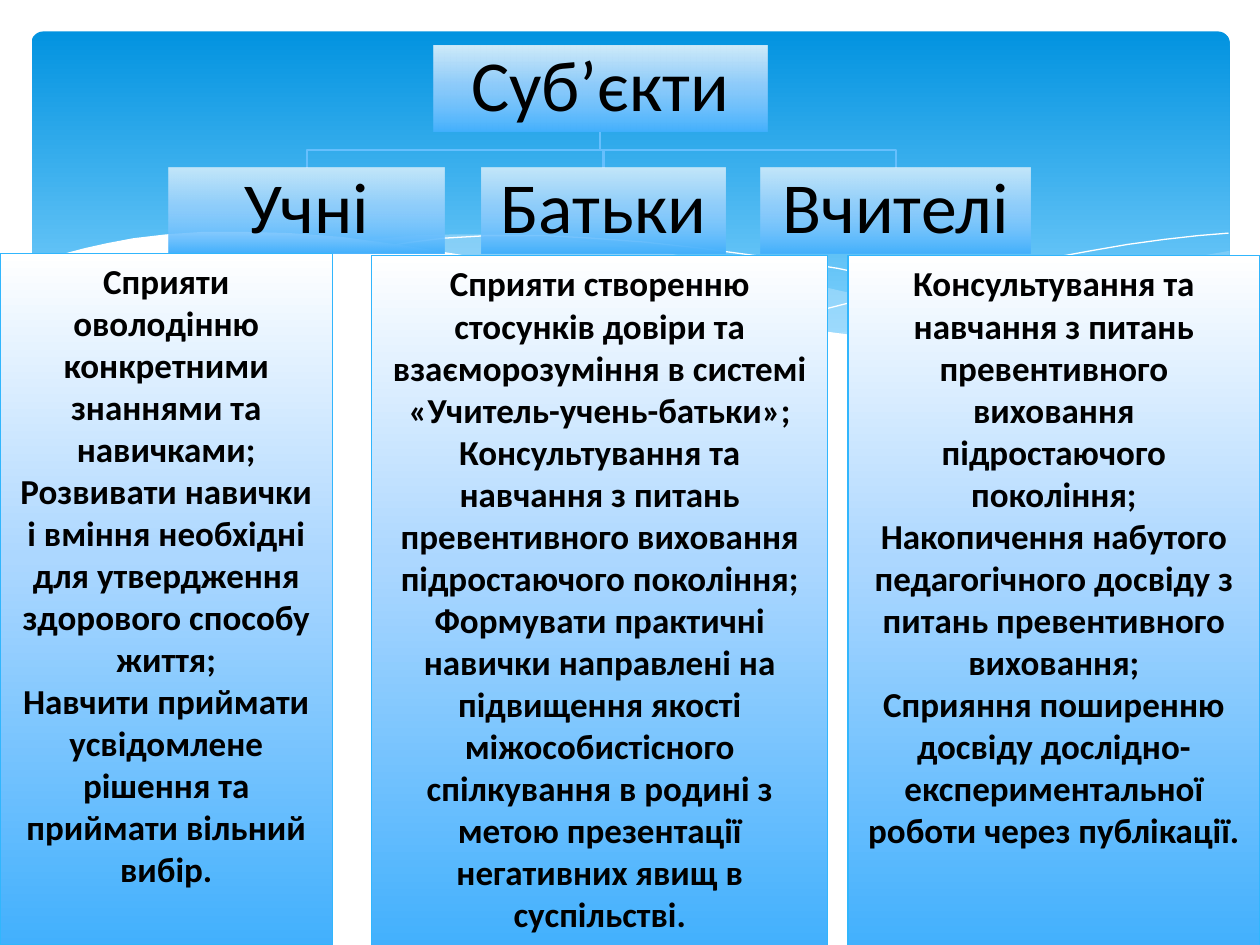
from lxml.etree import SubElement
from pptx import Presentation
from pptx.dml.color import RGBColor
from pptx.enum.shapes import MSO_SHAPE as Preset
from pptx.enum.text import MSO_ANCHOR as Anchor, PP_ALIGN as Align
from pptx.oxml.ns import qn
from pptx.util import Inches, Pt

COLORS = {
    "sky_top": "0293E0", "sky_bottom": "83D3FE", "mist": "C6E7FC",
    "white": "FFFFFF", "pale": "ACD7FF", "blue": "42B0FD",
    "branch": "66BFFD", "border": "31B6FD", "text": "000000",
}
SKY = [(0, "sky_top", 100), (90, "sky_bottom", 100)]


def box_stops(opacity):
    return [(0, "white", opacity), (44, "pale", opacity), (100, "blue", 100)]


class SlideBuilder:
    font_name = "Calibri"
    label_format = {"size": Pt(41), "bold": False}
    duty_format = {"size": Pt(20), "bold": True}

    def __init__(self, slide):
        self.slide = slide

    def color(self, name):
        return RGBColor.from_string(COLORS[name])

    def outline(self, shape, name, width):
        if name is None:
            shape.line.fill.background()
        else:
            shape.line.color.rgb = self.color(name)
            shape.line.width = Pt(width)

    def gradient(self, shape, stops):
        shape.fill.gradient()
        shape.fill.gradient_angle = 270
        stop_list = shape._element.spPr.find(qn("a:gradFill")).find(qn("a:gsLst"))
        for old_stop in list(stop_list):
            stop_list.remove(old_stop)
        for position, name, opacity in stops:
            stop = SubElement(stop_list, qn("a:gs"), pos=str(position * 1000))
            tint = SubElement(stop, qn("a:srgbClr"), val=COLORS[name])
            SubElement(tint, qn("a:alpha"), val=str(opacity * 1000))

    def box(self, bounds, stops, preset=Preset.RECTANGLE, line=None):
        shape = self.slide.shapes.add_shape(preset, *map(Inches, bounds))
        shape.shadow.inherit = False
        self.gradient(shape, stops)
        self.outline(shape, line, 0.75)
        return shape

    def set_text(self, shape, paragraphs, font_format, frame_format, spacing=1.0):
        frame = shape.text_frame
        for attribute, value in {"word_wrap": True, **frame_format}.items():
            setattr(frame, attribute, value)
        frame.text = "\n".join(paragraphs)
        for paragraph in frame.paragraphs:
            paragraph.alignment = Align.CENTER
            paragraph.line_spacing = spacing
            font = paragraph.runs[0].font
            font.color.rgb = self.color("text")
            for attribute, value in {"name": self.font_name, **font_format}.items():
                setattr(font, attribute, value)

    def label(self, text, bounds, opacity):
        margins = ("margin_left", "margin_top", "margin_right", "margin_bottom")
        frame_format = {"vertical_anchor": Anchor.MIDDLE, **dict.fromkeys(margins, Inches(0.03))}
        self.set_text(self.box(bounds, box_stops(opacity)), [text], self.label_format, frame_format, 0.9)

    def duties(self, paragraphs, bounds):
        column = self.box(bounds, box_stops(100), line="border")
        self.set_text(column, paragraphs, self.duty_format, {"vertical_anchor": Anchor.TOP})

    def outline_shape(self, points, fill=None, opacity=100, line=None, width=0):
        corners = [(Inches(x), Inches(y)) for x, y in points]
        builder = self.slide.shapes.build_freeform(*corners[0])
        builder.add_line_segments(corners[1:], close=fill is not None)
        shape = builder.convert_to_shape()
        shape.shadow.inherit = False
        if fill is None:
            shape.fill.background()
        else:
            shape.fill.solid()
            shape.fill.fore_color.rgb = self.color(fill)
            tint = shape._element.spPr.find(qn("a:solidFill"))[0]
            SubElement(tint, qn("a:alpha"), val=str(opacity * 1000))
        self.outline(shape, line, width)


RIGHT_MIST = [
    (9.76, 1.99), (9.48, 2.04), (9.21, 2.09), (8.91, 2.16), (8.61, 2.23), (8.05, 2.37),
    (7.53, 2.48), (7.06, 2.57), (6.61, 2.65), (6.91, 2.69), (7.32, 2.74), (7.69, 2.77),
    (8.03, 2.78), (8.44, 2.77), (8.81, 2.73), (9.13, 2.67), (9.42, 2.59), (9.76, 2.47),
]
MIDDLE_MIST = [
    (8.93, 2.73), (8.66, 2.69), (8.07, 2.6), (7.41, 2.48), (6.68, 2.31), (6.29, 2.22),
    (5.98, 2.14), (5.69, 2.08), (5.41, 2.03), (5.14, 1.98), (4.89, 1.94), (4.42, 1.89),
    (3.99, 1.86), (3.61, 1.86), (3.28, 1.87), (2.86, 1.91), (3.23, 1.96), (3.62, 2.03),
    (4.04, 2.11), (4.49, 2.22), (4.91, 2.32), (5.3, 2.4), (5.66, 2.48), (6.01, 2.55),
    (6.34, 2.61), (6.65, 2.66), (6.95, 2.7), (7.36, 2.75), (7.73, 2.77), (8.07, 2.78),
    (8.48, 2.77),
]
LONG_CREST = [
    (3.09, 1.95), (3.28, 1.92), (3.53, 1.89), (3.87, 1.87), (4.33, 1.87), (4.69, 1.89),
    (5.1, 1.92), (5.56, 1.97), (6.08, 2.04), (6.65, 2.13), (7.27, 2.26), (7.95, 2.41),
    (8.31, 2.51), (8.68, 2.61), (9.07, 2.72),
]
RIGHT_CREST = [
    (6.13, 2.57), (6.52, 2.46), (6.95, 2.35), (7.48, 2.23), (8.06, 2.1), (8.66, 1.99),
    (8.95, 1.94), (9.24, 1.9), (9.51, 1.87), (9.75, 1.85),
]
WHITE_WAVE = [
    (9.77, 2.46), (9.5, 2.56), (9.2, 2.65), (8.87, 2.71), (8.5, 2.75), (8.09, 2.77),
    (7.61, 2.75), (7.08, 2.7), (6.47, 2.62), (5.79, 2.5), (5.29, 2.39), (4.75, 2.27),
    (4.18, 2.13), (3.65, 2.02), (3.15, 1.94), (2.71, 1.88), (2.3, 1.85), (1.93, 1.84),
    (1.61, 1.84), (1.32, 1.86), (1.06, 1.89), (0.85, 1.93), (0.67, 1.97), (0.52, 2.01),
    (0.36, 2.07), (0.23, 2.13), (0.23, 3.29), (9.77, 3.29),
]
ROOT_X, ROOT_BOTTOM, BRANCH_Y, GROUP_TOP, LABEL_HEIGHT = 4.76, 1.05, 1.19, 1.33, 0.68
GROUPS = [
    ("Учні", 1.34, 2.19, (0, 2.01, 2.64, 5.49), [
        "Сприяти оволодінню конкретними знаннями та навичками;",
        "Розвивати навички і вміння необхідні для утвердження здорового способу життя;",
        "Навчити приймати усвідомлене рішення та приймати вільний вибір.",
    ]),
    ("Батьки", 3.82, 1.94, (2.95, 2.03, 3.62, 5.49), [
        "Сприяти створенню стосунків довіри та взаєморозуміння в системі «Учитель-учень-батьки»;",
        "Консультування та навчання з питань превентивного виховання підростаючого покоління;",
        "Формувати практичні навички направлені на підвищення якості міжособистісного спілкування "
        "в родині з метою презентації негативних явищ в суспільстві.",
    ]),
    ("Вчителі", 6.04, 2.14, (6.73, 2.03, 3.27, 5.49), [
        "Консультування та навчання з питань превентивного виховання підростаючого покоління;",
        "Накопичення набутого педагогічного досвіду з питань превентивного виховання;",
        "Сприяння поширенню досвіду дослідно- експериментальної роботи через публікації.",
    ]),
]


def main():
    presentation = Presentation()
    presentation.slide_width, presentation.slide_height = Inches(10), Inches(7.5)
    builder = SlideBuilder(presentation.slides.add_slide(presentation.slide_layouts[6]))

    sky = builder.box((0.25, 0.25, 9.51, 2.7), SKY, Preset.ROUNDED_RECTANGLE)
    sky.adjustments[0] = 0.034
    builder.outline_shape(RIGHT_MIST, fill="mist", opacity=29)
    builder.outline_shape(MIDDLE_MIST, fill="mist", opacity=40)
    for crest in (LONG_CREST, RIGHT_CREST):
        builder.outline_shape(crest, line="white")
    builder.outline_shape(WHITE_WAVE, fill="white")

    for _, left, width, _, _ in GROUPS:
        center = left + width / 2
        branch = [(ROOT_X, ROOT_BOTTOM), (ROOT_X, BRANCH_Y), (center, BRANCH_Y), (center, GROUP_TOP)]
        builder.outline_shape(branch, line="branch", width=1.25)
    builder.label("Суб’єкти", (3.44, 0.36, 2.65, LABEL_HEIGHT), 80)
    for title, left, width, _, _ in GROUPS:
        builder.label(title, (left, GROUP_TOP, width, LABEL_HEIGHT), 70)
    for _, _, _, bounds, paragraphs in GROUPS:
        builder.duties(paragraphs, bounds)

    presentation.save("out.pptx")


if __name__ == "__main__":
    main()
